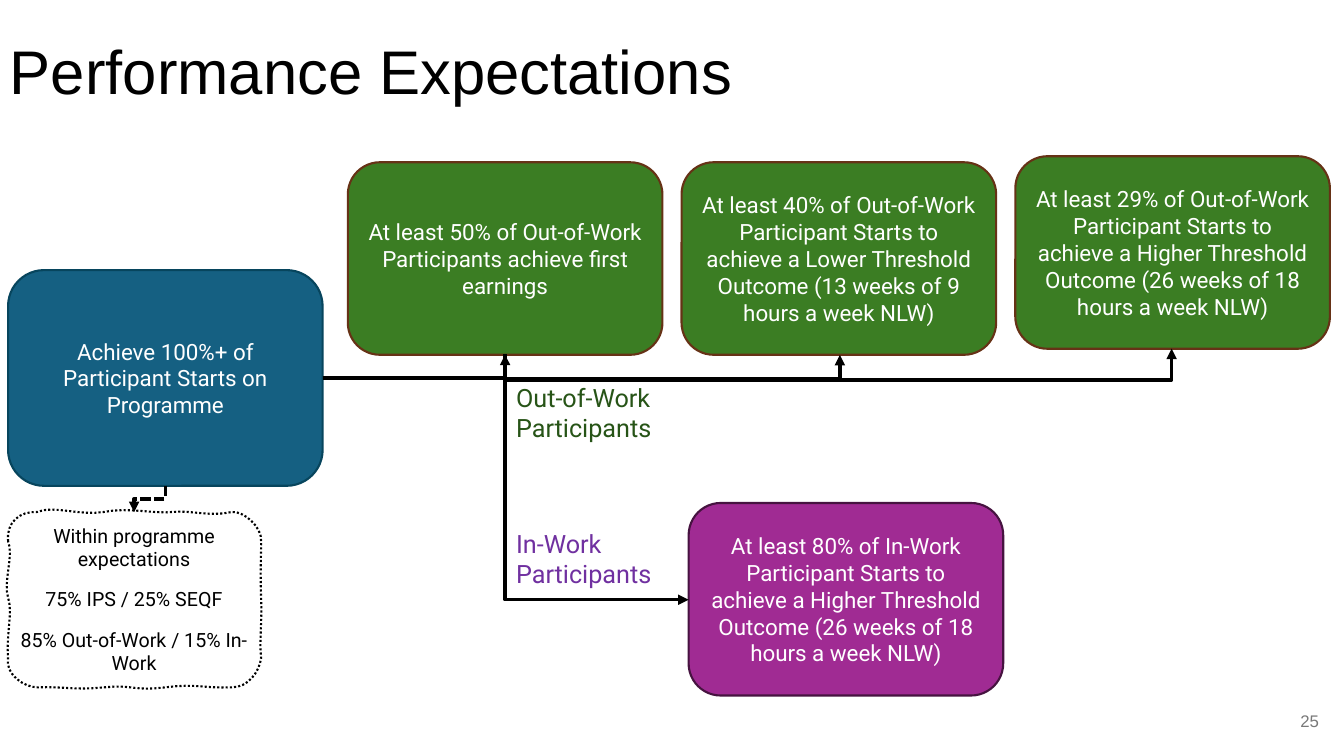
from dataclasses import dataclass

from lxml import etree
from pptx import Presentation
from pptx.dml.color import RGBColor
from pptx.enum import dml, shapes, text
from pptx.oxml import ns
from pptx.util import Inches, Pt


@dataclass(frozen=True)
class Theme:
    body: str = "Roboto"
    plain: str = "Arial"
    black: str = "000000"
    white: str = "FFFFFF"
    starts: tuple = ("156082", "07455D")
    out_of_work: tuple = ("3B7D23", "663216")
    in_work: tuple = ("A02B93", "461340")
    out_label: str = "275417"
    in_label: str = "7030A0"
    page: str = "797979"
    title_size: int = 44
    label_size: int = 18
    card_size: int = 16
    note_size: int = 14
    page_size: int = 12
    outline: float = 1.5
    arrow: float = 2.5


THEME = Theme()
CARD_WIDTH = 3.12
CARD_HEIGHT = 1.91
BRANCH_X = 5.01

NOTE_START = (0.08, 5.37)
# Each curve: first control point, second control point, end point.
NOTE_CURVES = [
    (0.06, 5.18, 0.2, 5.07, 0.37, 5.08), (0.53, 5.01, 0.79, 5.12, 1.03, 5.08),
    (1.27, 5.03, 1.52, 5.1, 1.71, 5.08), (1.9, 5.06, 2.07, 5.13, 2.3, 5.08),
    (2.42, 5.07, 2.6, 5.23, 2.59, 5.37), (2.59, 5.54, 2.58, 5.67, 2.59, 5.94),
    (2.6, 6.21, 2.57, 6.35, 2.59, 6.53), (2.57, 6.67, 2.46, 6.82, 2.3, 6.82),
    (2, 6.83, 1.95, 6.78, 1.64, 6.82), (1.32, 6.86, 1.33, 6.79, 1.03, 6.82),
    (0.74, 6.85, 0.63, 6.81, 0.37, 6.82), (0.24, 6.82, 0.05, 6.69, 0.08, 6.53),
    (0.06, 6.28, 0.13, 6.08, 0.08, 5.93), (0.03, 5.77, 0.14, 5.51, 0.08, 5.37),
]


def color(value):
    return RGBColor.from_string(value)


def write(shape, lines, size, ink, font=THEME.body, align=text.PP_ALIGN.LEFT,
          anchor=text.MSO_ANCHOR.TOP, gap=0, spacing=None):
    frame = shape.text_frame
    frame.word_wrap = True
    frame.vertical_anchor = anchor
    frame.text = "\n".join(lines)
    for paragraph in frame.paragraphs:
        paragraph.alignment = align
        paragraph.space_before = paragraph.space_after = Pt(gap)
        paragraph.line_spacing = spacing
        paragraph.font.name = font
        paragraph.font.size = Pt(size)
        paragraph.font.color.rgb = color(ink)


def add_label(slide, box, words, size, ink, **style):
    label = slide.shapes.add_textbox(*map(Inches, box))
    write(label, [words], size, ink, **style)


def paint(shape, fill, line):
    shape.shadow.inherit = False
    shape.fill.solid()
    shape.fill.fore_color.rgb = color(fill)
    shape.line.color.rgb = color(line)
    shape.line.width = Pt(THEME.outline)


def add_card(slide, left, top, words, colors, height=CARD_HEIGHT):
    card = slide.shapes.add_shape(
        shapes.MSO_SHAPE.ROUNDED_RECTANGLE,
        *map(Inches, (left, top, CARD_WIDTH, height)))
    paint(card, *colors)
    write(card, [words], THEME.card_size, THEME.white, gap=6,
          align=text.PP_ALIGN.CENTER, anchor=text.MSO_ANCHOR.MIDDLE)


def trace(start, curves, steps=8):
    """Return points along a chain of cubic Bézier curves."""
    points = []
    for x1, y1, x2, y2, x3, y3 in curves:
        for step in range(1, steps + 1):
            t = step / steps
            weights = ((1 - t) ** 3, 3 * t * (1 - t) ** 2, 3 * t * t * (1 - t), t ** 3)
            points.append(tuple(
                Inches(sum(w * v for w, v in zip(weights, values)))
                for values in ((start[0], x1, x2, x3), (start[1], y1, y2, y3))))
        start = (x3, y3)
    return points


def add_note(slide, lines):
    builder = slide.shapes.build_freeform(*map(Inches, NOTE_START))
    builder.add_line_segments(trace(NOTE_START, NOTE_CURVES), close=True)
    note = builder.convert_to_shape()
    paint(note, THEME.white, THEME.black)
    note.line.dash_style = dml.MSO_LINE.ROUND_DOT
    write(note, lines, THEME.note_size, THEME.black, gap=6,
          align=text.PP_ALIGN.CENTER, anchor=text.MSO_ANCHOR.MIDDLE)


def add_elbow(slide, begin, end, preset="bentConnector3"):
    """Add an arrow that leaves its start horizontally."""
    arrow = slide.shapes.add_connector(
        shapes.MSO_CONNECTOR.ELBOW, *map(Inches, (*begin, *end)))
    arrow.line.color.rgb = color(THEME.black)
    arrow.line.width = Pt(THEME.arrow)
    properties = arrow.element.spPr
    properties.find(ns.qn("a:prstGeom")).set("prst", preset)
    etree.SubElement(arrow.line._get_or_add_ln(), ns.qn("a:tailEnd"), type="triangle")
    etree.SubElement(properties, ns.qn("a:effectLst"))
    return arrow


def set_bend(arrow, share):
    guides = arrow.element.spPr.find(ns.qn("a:prstGeom")).get_or_add_avLst()
    etree.SubElement(guides, ns.qn("a:gd"), name="adj1",
                     fmla=f"val {round(share * 100000)}")


def add_vertical_elbow(slide, begin, end, bend_y):
    """Add an arrow that leaves and arrives vertically, crossing at bend_y."""
    (x0, y0), (x1, y1) = begin, end
    arrow = add_elbow(slide, begin, end)
    width, height = abs(y1 - y0), abs(x1 - x0)
    arrow.left = Inches((x0 + x1 - width) / 2)
    arrow.top = Inches((y0 + y1 - height) / 2)
    arrow.width, arrow.height = Inches(width), Inches(height)
    frame = arrow.element.spPr.find(ns.qn("a:xfrm"))
    frame.set("rot", "5400000")
    frame.set("flipH", str(int(y1 < y0)))
    frame.set("flipV", str(int(x1 > x0)))
    set_bend(arrow, (bend_y - y0) / (y1 - y0))
    return arrow


def main():
    deck = Presentation()
    deck.slide_width, deck.slide_height = Inches(13.33), Inches(7.5)
    slide = deck.slides.add_slide(deck.slide_layouts[6])

    add_label(slide, (0, 0.01, 13.33, 1.45), "Performance Expectations",
              THEME.title_size, THEME.black, font=THEME.plain,
              anchor=text.MSO_ANCHOR.MIDDLE, spacing=0.9)

    add_card(slide, 0.08, 2.68, "Achieve 100%+ of Participant Starts on Programme",
             THEME.starts, height=2.14)
    add_note(slide, ["Within programme expectations", "75% IPS / 25% SEQF",
                     "85% Out-of-Work / 15% In-Work"])

    out_of_work = [
        (1.61, "At least 50% of Out-of-Work Participants achieve first earnings"),
        (1.61, "At least 40% of Out-of-Work Participant Starts to achieve a Lower "
               "Threshold Outcome (13 weeks of 9 hours a week NLW)"),
        (1.55, "At least 29% of Out-of-Work Participant Starts to achieve a Higher "
               "Threshold Outcome (26 weeks of 18 hours a week NLW)"),
    ]
    for column, (top, words) in enumerate(out_of_work):
        add_card(slide, 3.45 + 3.31 * column, top, words, THEME.out_of_work)
    add_card(slide, 6.83, 4.99,
             "At least 80% of In-Work Participant Starts to achieve a Higher "
             "Threshold Outcome (26 weeks of 18 hours a week NLW)", THEME.in_work)

    to_note = add_vertical_elbow(slide, (1.64, 4.82), (1.33, 5.08), 4.95)
    to_note.line.dash_style = dml.MSO_LINE.SQUARE_DOT
    starts_exit = (3.2, 3.75)
    add_elbow(slide, starts_exit, (BRANCH_X, 3.52), "bentConnector2")
    add_vertical_elbow(slide, (BRANCH_X, 3.51), (8.33, 3.52), 3.76)
    add_vertical_elbow(slide, (BRANCH_X, 3.52), (11.62, 3.46), 3.77)
    in_work_entry = (6.83, 5.95)
    to_in_work = add_elbow(slide, starts_exit, in_work_entry)
    set_bend(to_in_work, (BRANCH_X - starts_exit[0]) / (in_work_entry[0] - starts_exit[0]))

    for top, words, ink in ((3.74, "Out-of-Work Participants", THEME.out_label),
                            (5.19, "In-Work Participants", THEME.in_label)):
        add_label(slide, (5.02, top, 1.55, 0.71), words, THEME.label_size, ink)
    add_label(slide, (12.13, 6.95, 1.05, 0.4), "25", THEME.page_size, THEME.page,
              font=THEME.plain, align=text.PP_ALIGN.RIGHT,
              anchor=text.MSO_ANCHOR.MIDDLE)

    deck.save("out.pptx")


if __name__ == "__main__":
    main()
